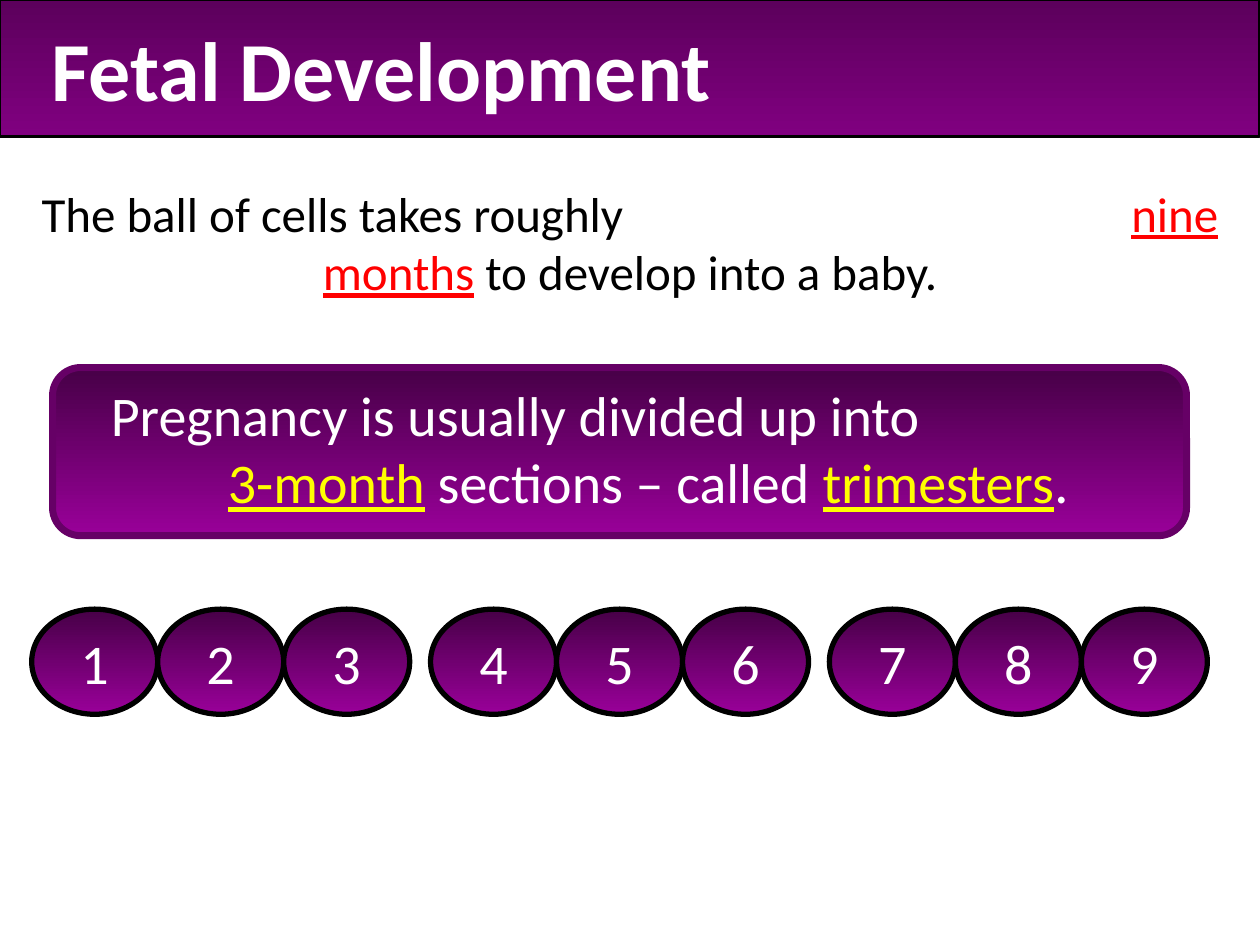
from lxml import etree
from pptx import Presentation
from pptx.dml import color
from pptx.enum import shapes, text
from pptx.oxml import ns
from pptx.util import Cm, Pt

WHITE, BLACK, RED, YELLOW = "FFFFFF", "000000", "FF0000", "FFFF00"
DEEP, BRIGHT = "470047", "990099"

TITLE = [(0, [("Fetal Development", WHITE, False)])]
INTRO = [
    (0, [("The ball of cells takes roughly\t", BLACK, False), ("nine", RED, True)]),
    (5.67, [("months", RED, True), (" to develop into a baby.", BLACK, False)]),
]
TRIMESTERS = [
    (0, [("Pregnancy is usually divided up into", WHITE, False)]),
    (2.36, [("3-month", YELLOW, True), (" sections – called ", WHITE, False),
            ("trimesters", YELLOW, True), (".", WHITE, False)]),
]
MONTHS = range(1, 10)
MONTHS_PER_TRIMESTER = 3
BUBBLE_LEFT, BUBBLE_TOP = 0.64, 12.28
BUBBLE_WIDTH, BUBBLE_HEIGHT = 2.54, 2.12
TRIMESTER_GAP = 0.42


def rgb(value):
    return color.RGBColor.from_string(value)


def write(box, lines, size, insets, align=text.PP_ALIGN.LEFT, bold=False):
    frame = box.text_frame
    frame.word_wrap = True
    frame.margin_left, frame.margin_top, frame.margin_right, frame.margin_bottom = map(Cm, insets)
    for number, (indent, spans) in enumerate(lines):
        para = frame.add_paragraph() if number else frame.paragraphs[0]
        para.alignment = align
        para._p.get_or_add_pPr().set("marL", str(Cm(indent)))
        for words, tint, underlined in spans:
            span = para.add_run()
            span.text = words
            span.font.name = "Calibri"
            span.font.size = Pt(size)
            span.font.bold = bold
            span.font.underline = underlined
            span.font.color.rgb = rgb(tint)


def add_right_tab(para, position):
    stops = etree.SubElement(para._p.get_or_add_pPr(), ns.qn("a:tabLst"))
    etree.SubElement(stops, ns.qn("a:tab"), pos=str(Cm(position)), algn="r")


def add_panel(page, kind, place, gradient, line, width):
    panel = page.shapes.add_shape(kind, *map(Cm, place))
    panel.shadow.inherit = False
    panel.fill.gradient()
    panel.fill.gradient_angle = 270
    for stop, tint in zip(panel.fill.gradient_stops, gradient):
        stop.color.rgb = rgb(tint)
    panel.line.color.rgb = rgb(line)
    panel.line.width = Pt(width)
    panel.text_frame.vertical_anchor = text.MSO_ANCHOR.MIDDLE
    return panel


def main():
    deck = Presentation()
    deck.slide_width, deck.slide_height = Cm(25.4), Cm(19.05)
    page = deck.slides.add_slide(deck.slide_layouts[6])
    kinds = shapes.MSO_SHAPE

    intro = page.shapes.add_textbox(Cm(0), Cm(3.56), Cm(25.4), Cm(2.65))
    write(intro, INTRO, 28, (0.84, 0.13, 0.8, 0.13))
    add_right_tab(intro.text_frame.paragraphs[0], 23.72)

    card = add_panel(page, kinds.ROUNDED_RECTANGLE, (1.06, 7.41, 22.86, 3.39),
                     (DEEP, BRIGHT), "660066", 4)
    write(card, TRIMESTERS, 32, (1.01, 0.13, 0.25, 0.28))

    banner = add_panel(page, kinds.RECTANGLE, (0, 0, 25.4, 2.75),
                       ("5C005C", "800080"), BLACK, 1.75)
    write(banner, TITLE, 48, (1.04, 0.13, 0.25, 0.13), bold=True)

    for index, month in enumerate(MONTHS):
        left = BUBBLE_LEFT + index * BUBBLE_WIDTH + index // MONTHS_PER_TRIMESTER * TRIMESTER_GAP
        bubble = add_panel(page, kinds.OVAL, (left, BUBBLE_TOP, BUBBLE_WIDTH, BUBBLE_HEIGHT),
                           (DEEP, BRIGHT), BLACK, 3)
        write(bubble, [(0, [(str(month), WHITE, False)])], 32, (0, 0, 0, 0),
              text.PP_ALIGN.CENTER)

    deck.save("out.pptx")


if __name__ == "__main__":
    main()
